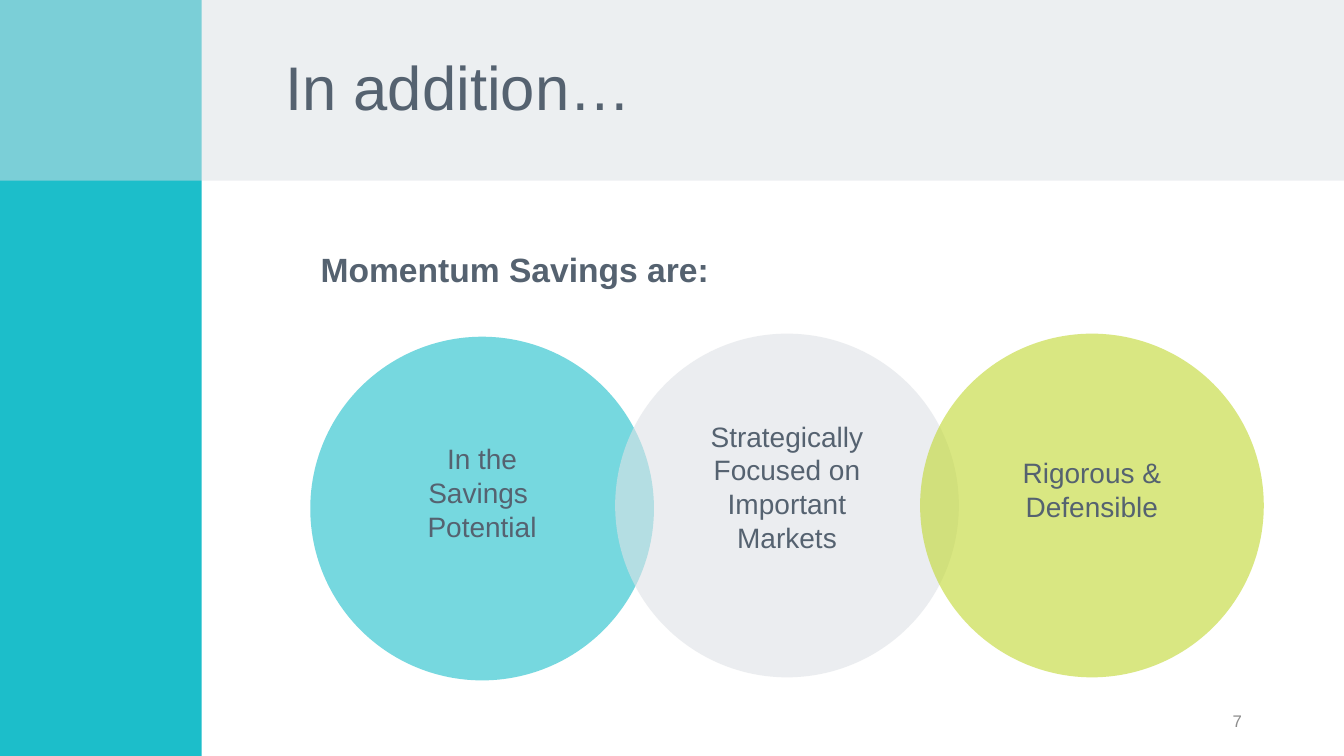
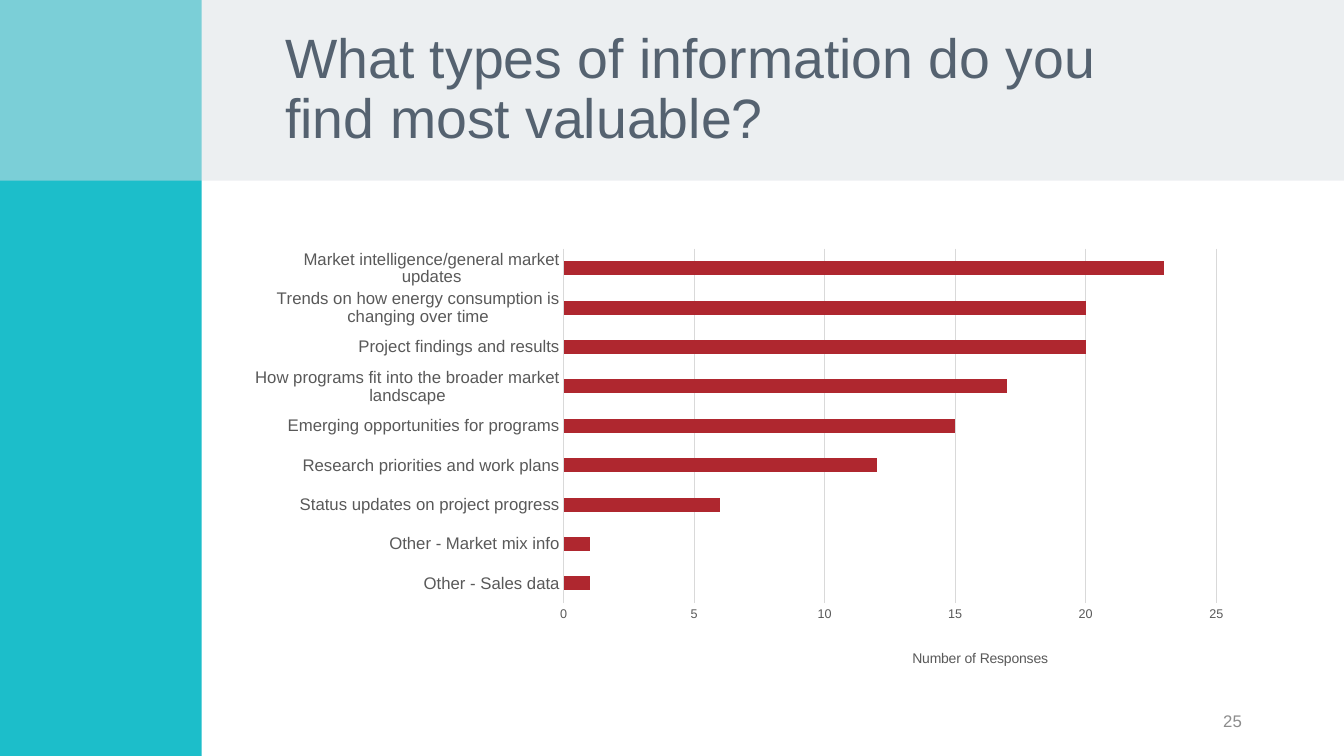
from dataclasses import dataclass

from lxml.etree import SubElement
from pptx import Presentation
from pptx.chart.data import CategoryChartData
from pptx.dml.color import RGBColor
from pptx.enum.chart import XL_CHART_TYPE, XL_TICK_MARK
from pptx.enum.shapes import MSO_SHAPE
from pptx.enum.text import MSO_ANCHOR, MSO_AUTO_SIZE, PP_ALIGN
from pptx.oxml import parse_xml
from pptx.oxml.ns import nsdecls, qn
from pptx.util import Pt

BAR = XL_CHART_TYPE.BAR_CLUSTERED
NO_TICK = XL_TICK_MARK.NONE
RECT, OVAL = MSO_SHAPE.RECTANGLE, MSO_SHAPE.OVAL
TOP, MIDDLE = MSO_ANCHOR.TOP, MSO_ANCHOR.MIDDLE
LEFT, CENTER, RIGHT = PP_ALIGN.LEFT, PP_ALIGN.CENTER, PP_ALIGN.RIGHT
NO_FIT = MSO_AUTO_SIZE.NONE
BODY_LAYOUT, TITLE_LAYOUT = 1, 5


@dataclass(frozen=True)
class Theme:
    font: str = "Arial"
    ink: str = "556270"
    teal: str = "1CBECA"
    band: str = "DBE0E4"
    pale: str = "DEE2E6"
    lime: str = "C1D82F"
    red: str = "AF272F"
    muted: str = "8C8C8C"
    label: str = "595959"
    grid: str = "D9D9D9"
    title: float = 44
    lead: float = 24
    item: float = 20
    small: float = 12
    axis: float = 10
    tick: float = 9


def rgb(code):
    return RGBColor.from_string(code)


def place(node, spot, **parts):
    old = node.find(qn("c:layout"))
    if old is not None:
        node.remove(old)
    inner = "".join(f'<c:{key} val="{val}"/>' for key, val in parts.items())
    node.insert(spot, parse_xml(
        f'<c:layout {nsdecls("c")}><c:manualLayout>{inner}</c:manualLayout></c:layout>'))


class Deck:
    def __init__(self, theme):
        self.theme = theme
        self.show = Presentation()
        self.show.slide_width, self.show.slide_height = Pt(960), Pt(540)
        self.slide = None

    def style(self, font, size, color, bold=False):
        font.name, font.size, font.bold = self.theme.font, Pt(size), bold
        font.color.rgb = rgb(color)

    def move(self, shape, box):
        shape.left, shape.top, shape.width, shape.height = map(Pt, box)

    def fill_text(self, shape, text, size, color, align, anchor=MIDDLE,
                  inset=(7.2, 3.6, 7.2, 3.6), bold=False, space=1.0):
        frame = shape.text_frame
        frame.text = text
        frame.word_wrap, frame.auto_size = True, NO_FIT
        frame.vertical_anchor = anchor
        (frame.margin_left, frame.margin_top,
         frame.margin_right, frame.margin_bottom) = map(Pt, inset)
        for para in frame.paragraphs:
            para.alignment, para.line_spacing = align, space
            para.space_before = Pt(0)
            for run in para.runs:
                self.style(run.font, size, color, bold)

    def shape(self, kind, box, color, alpha=100):
        item = self.slide.shapes.add_shape(kind, *map(Pt, box))
        item.shadow.inherit = False
        item.fill.solid()
        item.fill.fore_color.rgb = rgb(color)
        item.line.fill.background()
        if alpha < 100:
            tint = item.element.find(".//" + qn("a:srgbClr"))
            SubElement(tint, qn("a:alpha"), val=str(alpha * 1000))
        return item

    def page(self, layout, title, number, width, size=None):
        look = self.theme
        self.slide = self.show.slides.add_slide(self.show.slide_layouts[layout])
        head = self.slide.shapes.title
        for box, color, alpha in (((0, 0, 144, 540), look.teal, 100),
                                  ((0, 0, 960, 129), look.band, 50)):
            head.element.addprevious(self.shape(RECT, box, color, alpha).element)
        self.move(head, (182.2, 27.4, width, 74.2))
        self.fill_text(head, title, size or look.title, look.ink, LEFT,
                       inset=(21.6, 3.6, 21.6, 3.6), space=0.9)
        foot = self.slide.shapes.add_textbox(*map(Pt, (678.2, 500.4, 216, 28.8)))
        self.fill_text(foot, str(number), look.small, look.muted, RIGHT)

    def lead(self, text, box):
        body = self.slide.placeholders[1]
        self.move(body, box)
        self.fill_text(body, text, self.theme.lead, self.theme.ink, LEFT, TOP,
                       bold=True, space=0.9)
        body.text_frame.paragraphs[0].space_after = Pt(6)
        props = body.element.find(".//" + qn("a:pPr"))
        props.set("marL", "0")
        props.set("indent", "0")
        SubElement(props, qn("a:buNone"))

    def disc(self, text, left, top, size, color, lift):
        item = self.shape(OVAL, (left, top, size, size), color, 60)
        self.fill_text(item, text, self.theme.item, self.theme.ink, CENTER,
                       inset=(9, 3.6, 9, 3.6 + lift))

    def bars(self, box, data, caption):
        look = self.theme
        chart = self.slide.shapes.add_chart(BAR, *map(Pt, box), data).chart
        chart.has_legend = chart.has_title = False
        self.style(chart.font, look.axis, look.label)
        plot = chart.plots[0]
        plot.gap_width, plot.vary_by_categories = 182, False
        fill = plot.series[0].format.fill
        fill.solid()
        fill.fore_color.rgb = rgb(look.red)

        cats, vals = chart.category_axis, chart.value_axis
        for axis, size in ((cats, look.small), (vals, look.tick)):
            axis.major_tick_mark = axis.minor_tick_mark = NO_TICK
            self.style(axis.tick_labels.font, size, look.label)
        vals.minimum_scale, vals.maximum_scale, vals.major_unit = 0, 25, 5
        vals.format.line.fill.background()
        for line in (cats.format.line, vals.major_gridlines.format.line):
            line.color.rgb, line.width = rgb(look.grid), Pt(0.75)

        name = vals.axis_title
        name.text_frame.text = caption
        self.style(name.text_frame.paragraphs[0].runs[0].font, look.axis, look.label)
        place(name.element, 1, xMode="edge", yMode="edge", x=0.66, y=0.94)
        place(chart.element.find(".//" + qn("c:plotArea")), 0,
              layoutTarget="inner", xMode="edge", yMode="edge",
              x=0.31, y=0.02, w=0.66, h=0.82)


def venn(deck):
    look = deck.theme
    deck.page(BODY_LAYOUT, "In addition…", 7, 541.4)
    deck.lead("Momentum Savings are:", (221.8, 177.8, 463.7, 32.4))
    discs = (
        ("In the\nSavings \nPotential", 240.5, look.teal, 23),
        ("Strategically Focused on Important Markets", 238.3, look.pale, 27),
        ("Rigorous & Defensible", 238.3, look.lime, 23),
    )
    for step, (text, top, color, lift) in enumerate(discs):
        deck.disc(text, 221.6 + 217.8 * step, top, 245.5, color, lift)


def survey(deck):
    deck.page(TITLE_LAYOUT, "What types of information do you find most valuable?",
              25, 684.7, 39.6)
    votes = {
        "Other - Sales data": 1,
        "Other - Market mix info": 1,
        "Status updates on project progress": 6,
        "Research priorities and work plans": 12,
        "Emerging opportunities for programs": 15,
        "How programs fit into the broader market landscape": 17,
        "Project findings and results": 20,
        "Trends on how energy consumption is changing over time": 20,
        "Market intelligence/general market updates": 23,
    }
    data = CategoryChartData()
    data.categories = list(votes)
    data.add_series("Series 1", list(votes.values()))
    deck.bars((182.2, 171.4, 707.8, 308.9), data, "Number of Responses")


def main():
    deck = Deck(Theme())
    venn(deck)
    survey(deck)
    deck.show.save("out.pptx")


if __name__ == "__main__":
    main()
